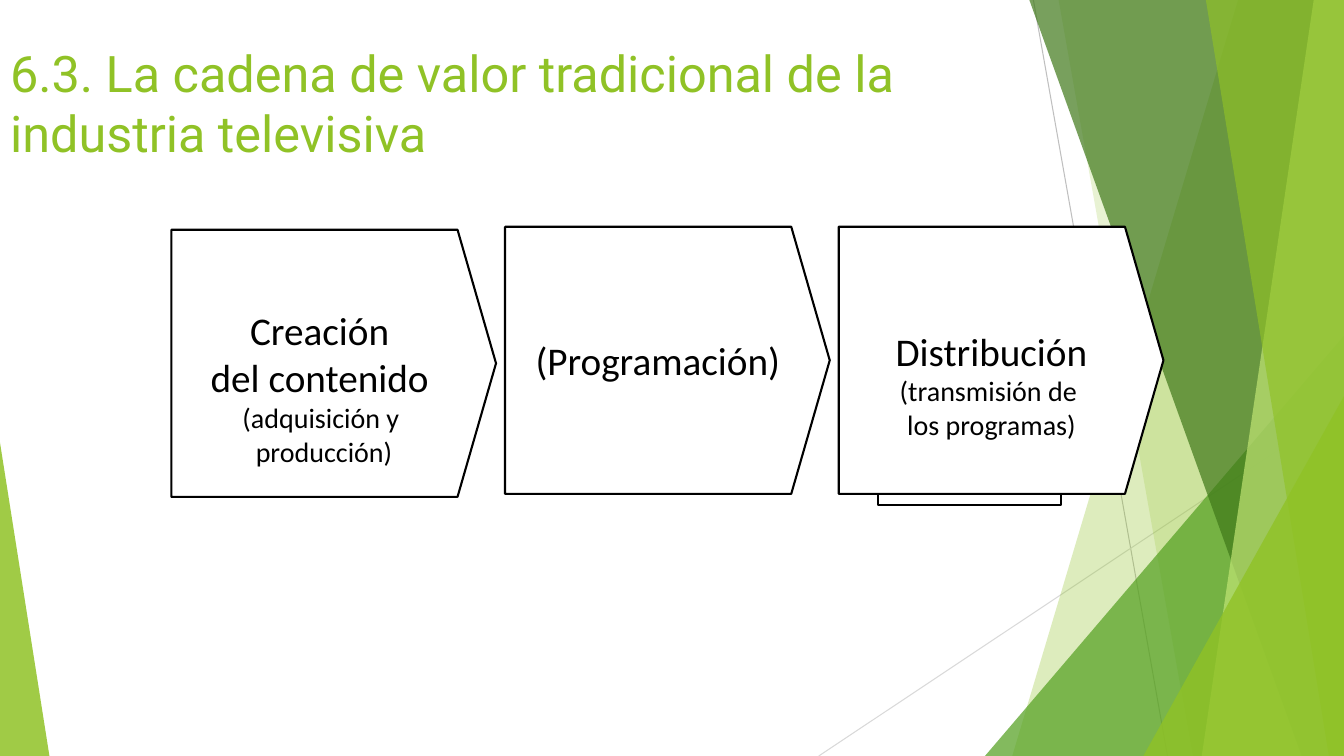
from lxml.etree import SubElement
from pptx import Presentation
from pptx.dml.color import RGBColor
from pptx.enum.shapes import MSO_CONNECTOR, MSO_SHAPE
from pptx.enum.text import MSO_ANCHOR, PP_ALIGN
from pptx.oxml.ns import qn
from pptx.util import Inches, Pt

GREEN, BLACK, WHITE = "90C226", "000000", "FFFFFF"

deck = Presentation()
deck.slide_width, deck.slide_height = Inches(13.33), Inches(7.5)
page = deck.slides.add_slide(deck.slide_layouts[5])
shapes = page.shapes


def share(*percents):
    """Turn percentages of the slide, alternately across and down, into lengths."""
    sides = (deck.slide_width, deck.slide_height)
    return [int(sides[i % 2] * percent / 100) for i, percent in enumerate(percents)]


def paint(shape, fill, line=None, opacity=100):
    shape.shadow.inherit = False
    shape.fill.solid()
    shape.fill.fore_color.rgb = RGBColor.from_string(fill)
    if opacity < 100:
        color = shape.fill._xPr.find(qn("a:solidFill"))[0]
        SubElement(color, qn("a:alpha"), val=str(opacity * 1000))
    if line:
        shape.line.color.rgb = RGBColor.from_string(line)
        shape.line.width = Pt(1.5)
    else:
        shape.line.fill.background()


# Thin lines behind the green facets
for ends, color in [((76.89, 0, 86.87, 100), "BFBFBF"), ((100, 53.73, 60.92, 100), "D9D9D9")]:
    ray = shapes.add_connector(MSO_CONNECTOR.STRAIGHT, *share(*ends))
    ray.line.color.rgb = RGBColor.from_string(color)
    ray.line.width = Pt(0.75)
    SubElement(ray._element.spPr, qn("a:effectLst"))

# Facets, back to front. A band gives the x of its slanted left edge at top and bottom;
# a triangle gives left, top, width and the place of its apex.
facets = [
    ("band", (92.12, 75.32), GREEN, 30),
    ("band", (78.77, 88.75), GREEN, 20),
    ("triangle", (73.29, 44.4, 26.71, 1), "54A021", 72),
    ("band", (76.59, 96.85), "3F7819", 70),
    ("band", (97.75, 89.42), "C0E474", 70),
    ("band", (89.72, 98.87), GREEN, 65),
    ("triangle", (85.07, 52.4, 14.93, 1), GREEN, 80),
    ("triangle", (0, 58.53, 3.68, 0), GREEN, 85),
]
for kind, numbers, color, opacity in facets:
    if kind == "band":
        top_x, bottom_x = numbers
        outline = shapes.build_freeform(*share(top_x, 0))
        corners = [(100, 0), (100, 100), (bottom_x, 100)]
        outline.add_line_segments([share(*corner) for corner in corners], close=True)
        facet = outline.convert_to_shape()
    else:
        left, top, width, apex = numbers
        facet = shapes.add_shape(MSO_SHAPE.ISOSCELES_TRIANGLE,
                                 *share(left, top, width, 100 - top))
        facet.adjustments[0] = apex
    paint(facet, color, opacity=opacity)

# Title
title = shapes.title
title.left, title.top, title.width, title.height = share(0, 5.2, 74.72, 16.67)
title.text_frame.text = "6.3. La cadena de valor tradicional de la industria televisiva"
title.text_frame.word_wrap = True
title.text_frame.vertical_anchor = MSO_ANCHOR.MIDDLE
para = title.text_frame.paragraphs[0]
para.alignment = PP_ALIGN.LEFT
para.font.size, para.font.name = Pt(36), "Roboto"
para.font.color.rgb = RGBColor.from_string(GREEN)

# Value chain
tab = shapes.add_shape(MSO_SHAPE.RECTANGLE, *share(65.34, 60.93, 13.58, 5.87))
paint(tab, WHITE, BLACK)

# Each stage: top, top margin in inches, lines with their sizes
stages = [
    (30.4, 0.52, [("Creación ", 28), ("del contenido ", 28),
                  ("(adquisición y ", 20), ("producción)", 20)]),
    (30, 0.05, [("(Programación)", 28)]),
    (30, 0.52, [("Distribución", 28), ("(transmisión de ", 20), ("los programas)", 20)]),
]
for column, (top, margin, lines) in enumerate(stages):
    stage = shapes.add_shape(MSO_SHAPE.PENTAGON,
                             *share(12.75 + column * 24.83, top, 24.16, 35.33))
    stage.adjustments[0] = 0.144
    paint(stage, WHITE, BLACK)
    frame = stage.text_frame
    frame.word_wrap = True
    frame.vertical_anchor = MSO_ANCHOR.MIDDLE
    frame.margin_left = frame.margin_right = Inches(0.06)
    frame.margin_top, frame.margin_bottom = Inches(margin), Inches(0.05)
    frame.text = "\n".join(text for text, size in lines)
    for para, (text, size) in zip(frame.paragraphs, lines):
        para.alignment = PP_ALIGN.CENTER
        span = para.runs[0]
        span.font.size, span.font.name = Pt(size), "Calibri"
        span.font.color.rgb = RGBColor.from_string(BLACK)

deck.save("out.pptx")
